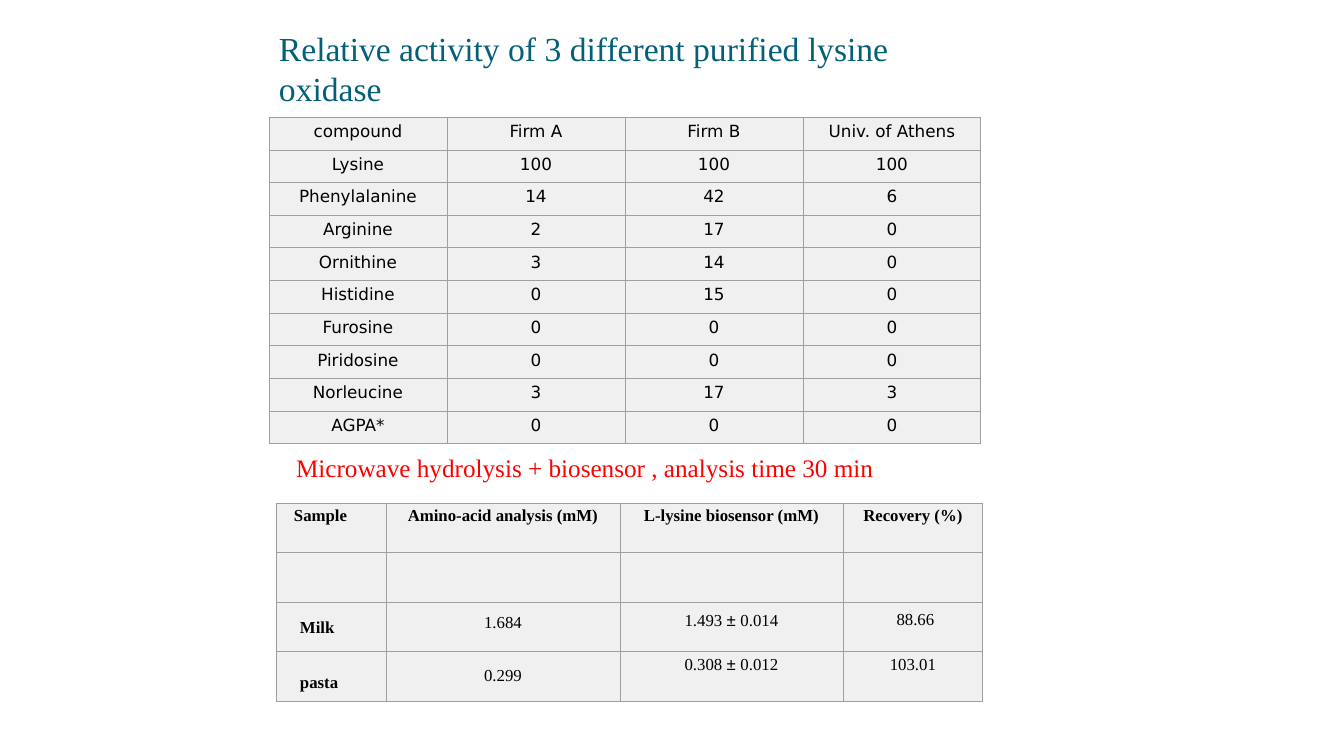
from dataclasses import dataclass

from lxml import etree
from pptx import Presentation
from pptx import util as u
from pptx.dml.color import RGBColor
from pptx.enum.text import PP_ALIGN
from pptx.oxml.ns import qn

EMU_PER_PX = 914400 / 100.8


@dataclass(frozen=True)
class Theme:
    """Colours, fonts and type sizes of the slide."""
    heading: str = "045F79"
    accent: str = "FF0000"
    ink: str = "000000"
    cell: str = "F0F0F0"
    rule: str = "9F9F9F"
    serif: str = "Times New Roman"
    sans: str = "DejaVu Sans"
    symbol: str = "Arial"
    heading_size: int = 24
    accent_size: int = 18
    table_size: int = 12
    inner_line: float = 0.25
    outer_line: float = 0.75


@dataclass(frozen=True)
class Entry:
    """Text of a table cell with its insets in px."""
    words: str
    top: int
    left: int = 0
    bold: bool = False
    align: PP_ALIGN = PP_ALIGN.CENTER


THEME = Theme()

ACTIVITY = [
    ("compound", "Firm A", "Firm B", "Univ. of Athens"),
    ("Lysine", "100", "100", "100"),
    ("Phenylalanine", "14", "42", "6"),
    ("Arginine", "2", "17", "0"),
    ("Ornithine", "3", "14", "0"),
    ("Histidine", "0", "15", "0"),
    ("Furosine", "0", "0", "0"),
    ("Piridosine", "0", "0", "0"),
    ("Norleucine", "3", "17", "3"),
    ("AGPA*", "0", "0", "0"),
]

RECOVERY = [
    [Entry("Sample", 4, 18, True, PP_ALIGN.LEFT),
     Entry("Amino-acid analysis (mM)", 4, bold=True),
     Entry("L-lysine biosensor (mM)", 4, bold=True),
     Entry("Recovery (%)", 4, bold=True)],
    [None] * 4,
    [Entry("Milk", 17, 24, True, PP_ALIGN.LEFT), Entry("1.684", 12),
     Entry("1.493 ± 0.014", 9), Entry("88.66", 9, 5)],
    [Entry("pasta", 22, 24, True, PP_ALIGN.LEFT), Entry("0.299", 15),
     Entry("0.308 ± 0.012", 4), Entry("103.01", 4)],
]


def px(length):
    """Turn px into EMU."""
    return u.Emu(round(length * EMU_PER_PX))


def set_font(font, name, size, color, bold=False):
    """Set the face, size, colour and weight of a font."""
    font.name, font.size, font.bold = name, u.Pt(size), bold
    font.color.rgb = RGBColor.from_string(color)


def add_line_of_text(slide, box, words, size, color):
    """Place a serif text box without insets."""
    frame = slide.shapes.add_textbox(*map(px, box)).text_frame
    frame.word_wrap = True
    frame.margin_left = frame.margin_top = 0
    frame.margin_right = frame.margin_bottom = 0
    frame.text = words
    set_font(frame.paragraphs[0].font, THEME.serif, size, color)


def set_borders(cell, outer):
    """Draw the four cell borders, heavier on the outer sides."""
    properties = cell._tc.get_or_add_tcPr()
    for place, side in enumerate("LRTB"):
        points = THEME.outer_line if side in outer else THEME.inner_line
        line = etree.Element(qn(f"a:ln{side}"), w=str(u.Pt(points)))
        fill = etree.SubElement(line, qn("a:solidFill"))
        etree.SubElement(fill, qn("a:srgbClr"), val=THEME.rule)
        properties.insert(place, line)


def fill_cell(cell, entry, face):
    """Write an entry into a cell, with the plus-minus sign in its own face."""
    cell.margin_left, cell.margin_top = px(entry.left), px(entry.top)
    cell.margin_right = cell.margin_bottom = 0
    paragraph = cell.text_frame.paragraphs[0]
    paragraph.alignment = entry.align
    set_font(paragraph.font, face, THEME.table_size, THEME.ink, entry.bold)
    for part in filter(None, entry.words.partition("± ")):
        run = paragraph.add_run()
        run.text = part
        if part == "± ":
            run.font.name = THEME.symbol


def add_grid(slide, box, widths, rows, face):
    """Place a table of entries with equal rows in the given box."""
    last_row, last_column = len(rows) - 1, len(widths) - 1
    grid = slide.shapes.add_table(len(rows), len(widths), *map(px, box)).table
    grid.first_row = grid.horz_banding = False
    for column, width in zip(grid.columns, widths):
        column.width = px(width)
    for r, entries in enumerate(rows):
        grid.rows[r].height = px(box[3] / len(rows))
        for c, entry in enumerate(entries):
            cell = grid.cell(r, c)
            cell.fill.solid()
            cell.fill.fore_color.rgb = RGBColor.from_string(THEME.cell)
            edges = {"L": c == 0, "R": c == last_column,
                     "T": r == 0, "B": r == last_row}
            set_borders(cell, [side for side in edges if edges[side]])
            if entry:
                fill_cell(cell, entry, face)


def add_activity(slide, box):
    """Place the heading and the relative activity table."""
    left, top, width, height = box
    add_line_of_text(slide, (left + 10, top, 690, 80),
                     "Relative activity of 3 different purified lysine oxidase",
                     THEME.heading_size, THEME.heading)
    rows = [[Entry(words, 5) for words in row] for row in ACTIVITY]
    add_grid(slide, (left, top + 89, width, height - 89),
             [width / 4] * 4, rows, THEME.sans)


def add_recovery(slide, box):
    """Place the method line and the recovery table."""
    left, top, width, height = box
    add_line_of_text(slide, (left + 20, top, 620, 33),
                     "Microwave hydrolysis + biosensor , analysis time 30 min",
                     THEME.accent_size, THEME.accent)
    add_grid(slide, (left, top + 51, width, height - 51),
             (110, 234, 223, 140), RECOVERY, THEME.serif)


def main():
    """Build the slide and save it."""
    deck = Presentation()
    deck.slide_width, deck.slide_height = px(1344), px(756)
    slide = deck.slides.add_slide(deck.slide_layouts[6])
    add_activity(slide, (269, 28, 712, 416))
    add_recovery(slide, (276, 452, 707, 249))
    deck.save("out.pptx")


if __name__ == "__main__":
    main()
